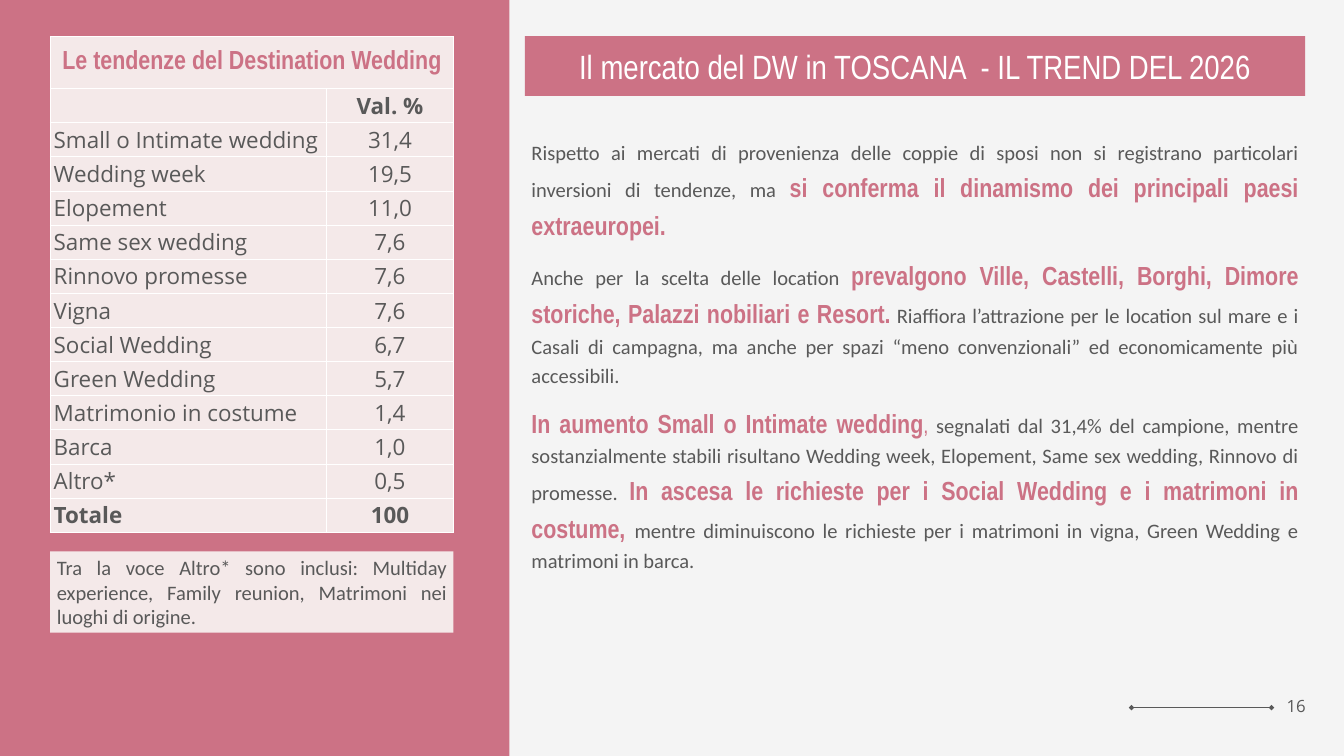
from lxml import etree
from pptx import Presentation
from pptx.dml.color import RGBColor
from pptx.enum.shapes import MSO_CONNECTOR as Connector, MSO_SHAPE as Shape
from pptx.enum.text import MSO_ANCHOR as Anchor, MSO_AUTO_SIZE as AutoSize, PP_ALIGN as Align
from pptx.oxml.ns import qn
from pptx.util import Cm, Pt

ROSE = RGBColor(0xCC, 0x72, 0x85)
BLUSH = RGBColor(0xF4, 0xE9, 0xE9)
PALE = RGBColor(0xF4, 0xF4, 0xF4)
GREY = RGBColor(0x59, 0x59, 0x59)
WHITE = RGBColor(0xFF, 0xFF, 0xFF)

PLAIN = dict(font="Calibri", size=22, color=GREY)
STRONG = dict(font="Arial Narrow", size=28, color=ROSE, bold=True)
COMMA = dict(font="Arial Narrow", size=24, color=ROSE)
FIGURE = dict(font="Open Sans", size=24, color=GREY)
HEADING = dict(font="Arial Narrow", size=36, color=WHITE)
PAGE_NUMBER = dict(font="Open Sans", size=18, color=GREY)

TRENDS = [
    ("", "Val. %"),
    ("Small o Intimate wedding", "31,4"),
    ("Wedding week", "19,5"),
    ("Elopement", "11,0"),
    ("Same sex wedding", "7,6"),
    ("Rinnovo promesse", "7,6"),
    ("Vigna", "7,6"),
    ("Social Wedding", "6,7"),
    ("Green Wedding", "5,7"),
    ("Matrimonio in costume", "1,4"),
    ("Barca", "1,0"),
    ("Altro*", "0,5"),
    ("Totale", "100"),
]

COMMENTARY = [
    [("Rispetto ai mercati di provenienza delle coppie di sposi non si registrano "
      "particolari inversioni di tendenze, ma ", PLAIN),
     ("si conferma il dinamismo dei principali paesi extraeuropei.", STRONG)],
    [("Anche per la scelta delle location ", PLAIN),
     ("prevalgono Ville, Castelli, Borghi, Dimore storiche, Palazzi nobiliari e Resort.", STRONG),
     (" Riaffiora l’attrazione per le location sul mare e i Casali di campagna, ma anche "
      "per spazi “meno convenzionali” ed economicamente più accessibili.", PLAIN)],
    [("In aumento Small o Intimate wedding", STRONG),
     (",", COMMA),
     (" segnalati dal 31,4% del campione, mentre sostanzialmente stabili risultano Wedding "
      "week, Elopement, Same sex wedding, Rinnovo di promesse. ", PLAIN),
     ("In ascesa le richieste per i Social Wedding e i matrimoni in costume, ", STRONG),
     ("mentre diminuiscono le richieste per i matrimoni in vigna, Green Wedding e "
      "matrimoni in barca.", PLAIN)],
]

NOTE = ("Tra la voce Altro* sono inclusi: Multiday experience, Family reunion, "
        "Matrimoni nei luoghi di origine.")


def add_span(para, text, font, size, color, bold=False):
    """Append formatted text to a paragraph."""
    span = para.add_run()
    span.text = text
    span.font.name = font
    span.font.size = Pt(size)
    span.font.color.rgb = color
    span.font.bold = bold


class SlideBuilder:
    """Draw styled elements on the current slide."""

    def __init__(self, deck):
        self.page = deck.slides.add_slide(deck.slide_layouts[5])
        background = self.page.background.fill
        background.solid()
        background.fore_color.rgb = ROSE

    def title(self, text, left, top, width, height):
        box = self.page.shapes.title
        box.left, box.top, box.width, box.height = map(Cm, (left, top, width, height))
        box.fill.solid()
        box.fill.fore_color.rgb = ROSE
        frame = box.text_frame
        frame.auto_size = AutoSize.NONE
        frame.vertical_anchor = Anchor.MIDDLE
        frame.margin_left = frame.margin_right = frame.margin_top = frame.margin_bottom = 0
        frame.paragraphs[0].alignment = Align.CENTER
        add_span(frame.paragraphs[0], text, **HEADING)

    def panel(self, color, left, top, width, height):
        box = self.page.shapes.add_shape(Shape.RECTANGLE, *map(Cm, (left, top, width, height)))
        box.shadow.inherit = False
        box.fill.solid()
        box.fill.fore_color.rgb = color
        box.line.fill.background()
        return box

    def text(self, paragraphs, left, top, width, height, align=Align.JUSTIFY, spacing=1.0, gap=0):
        box = self.page.shapes.add_textbox(*map(Cm, (left, top, width, height)))
        self.paragraphs(box, paragraphs, align, spacing, gap)

    def paragraphs(self, box, paragraphs, align=Align.JUSTIFY, spacing=1.0, gap=0):
        frame = box.text_frame
        frame.word_wrap = True
        frame.auto_size = AutoSize.SHAPE_TO_FIT_TEXT
        for index, spans in enumerate(paragraphs):
            para = frame.add_paragraph() if index else frame.paragraphs[0]
            para.alignment = align
            para.line_spacing = spacing
            if index:
                para.space_before = Pt(gap)
            for text, style in spans:
                add_span(para, text, **style)

    def cell(self, cell, text, align, style):
        cell.vertical_anchor = Anchor.MIDDLE
        cell.margin_left = cell.margin_right = Cm(0.13)
        cell.margin_top = cell.margin_bottom = Cm(0.05)
        properties = cell._tc.get_or_add_tcPr()
        for side in ("a:lnL", "a:lnR", "a:lnT", "a:lnB"):
            border = etree.SubElement(properties, qn(side), w=str(Pt(1)))
            fill = etree.SubElement(border, qn("a:solidFill"))
            etree.SubElement(fill, qn("a:srgbClr"), val=str(WHITE))
        cell.fill.solid()
        cell.fill.fore_color.rgb = BLUSH
        para = cell.text_frame.paragraphs[0]
        para.alignment = align
        if text:
            add_span(para, text, **style)
        else:
            para.font.size = Pt(style["size"])

    def table(self, heading, rows, left, top, columns, head_height, row_height):
        height = head_height + row_height * len(rows)
        frame = self.page.shapes.add_table(
            len(rows) + 1, len(columns), *map(Cm, (left, top, sum(columns), height)))
        table = frame.table
        table.first_row = table.horz_banding = False
        for column, width in zip(table.columns, columns):
            column.width = Cm(width)
        for row in table.rows:
            row.height = Cm(row_height)
        table.rows[0].height = Cm(head_height)
        table.cell(0, 0).merge(table.cell(0, 1))
        self.cell(table.cell(0, 0), heading, Align.CENTER, STRONG)
        for number, (label, value) in enumerate(rows, 1):
            total = number == len(rows)
            self.cell(table.cell(number, 0), label, Align.LEFT, dict(FIGURE, bold=total))
            self.cell(table.cell(number, 1), value, Align.CENTER,
                      dict(FIGURE, bold=total or number == 1))

    def diamond_line(self, start, end, height):
        line = self.page.shapes.add_connector(
            Connector.STRAIGHT, Cm(start), Cm(height), Cm(end), Cm(height))
        line.line.color.rgb = GREY
        line.line.width = Pt(1.5)
        stroke = line._element.spPr.find(qn("a:ln"))
        for tip in ("a:headEnd", "a:tailEnd"):
            etree.SubElement(stroke, qn(tip), type="diamond")
        etree.SubElement(line._element.spPr, qn("a:effectLst"))


def main():
    """Build the wedding market slide."""
    deck = Presentation()
    deck.slide_width, deck.slide_height = Cm(50.8), Cm(28.58)
    slide = SlideBuilder(deck)
    panel = slide.panel(PALE, 19.25, 0, 31.55, 28.58)
    slide.page.shapes.title._element.addprevious(panel._element)
    slide.table("Le tendenze del Destination Wedding", TRENDS, 1.9, 1.37, (10.44, 4.8), 1.98, 1.29)
    slide.title("Il mercato del DW in TOSCANA  - IL TREND DEL 2026", 19.84, 1.37, 29.49, 2.26)
    slide.text(COMMENTARY, 19.84, 5, 29.49, 16.87, spacing=1.2, gap=14)
    slide.diamond_line(42.77, 48.06, 26.75)
    slide.text([[("16", PAGE_NUMBER)]], 48.26, 26.16, 1.47, 1.02, align=Align.CENTER)
    note = slide.panel(BLUSH, 1.9, 20.85, 15.24, 3.07)
    slide.paragraphs(note, [[(NOTE, PLAIN)]])
    deck.save("out.pptx")


if __name__ == "__main__":
    main()
